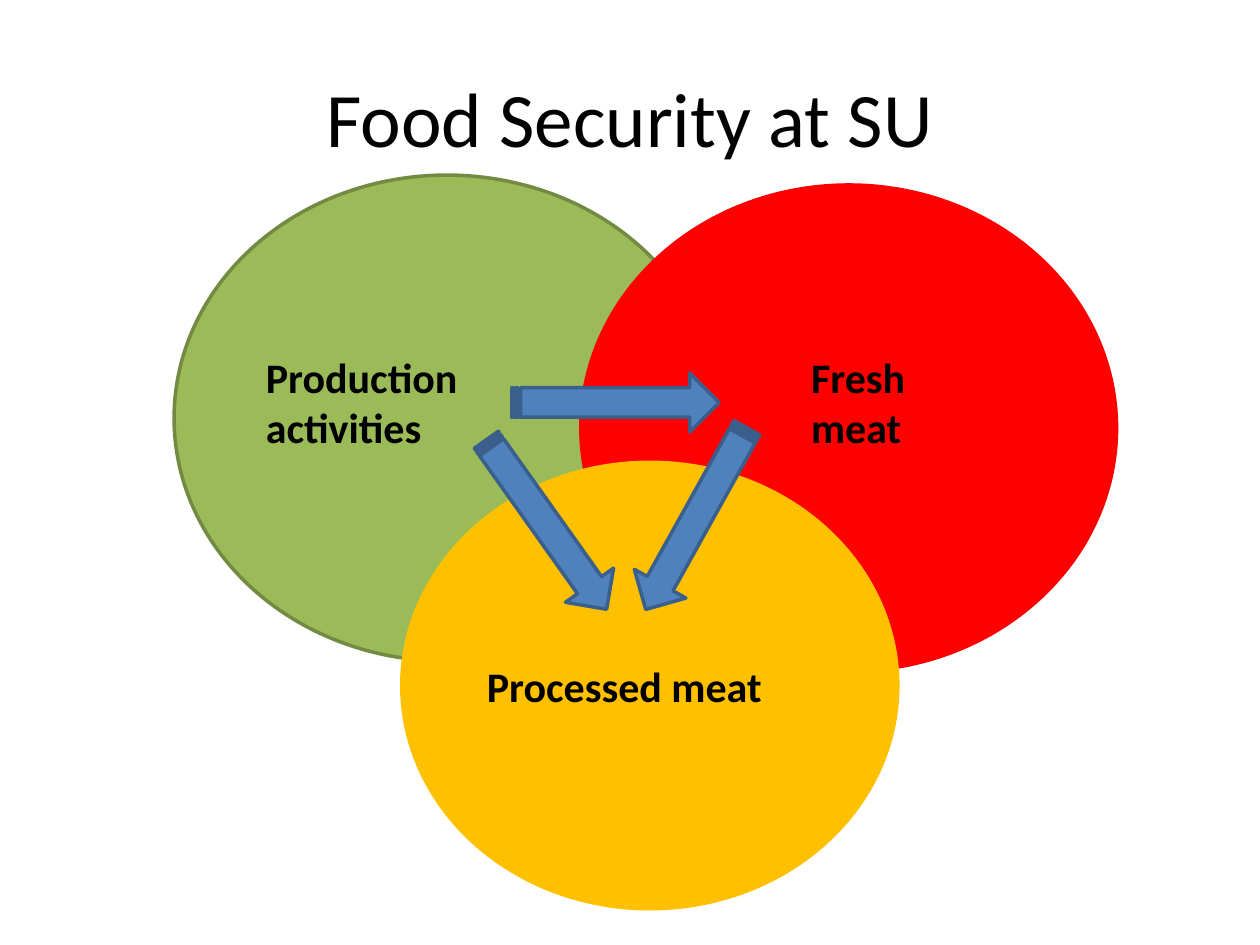
import pptx
import pptx.dml.color
import pptx.enum.shapes
import pptx.enum.text
import pptx.util
from pptx.util import Cm

SHAPE = pptx.enum.shapes.MSO_SHAPE
ALIGN = pptx.enum.text.PP_ALIGN
ANCHOR = pptx.enum.text.MSO_ANCHOR


def color(hex_value):
    return pptx.dml.color.RGBColor.from_string(hex_value)


class VennSlide:
    """Holds the style and the slide being drawn; lengths are in centimetres."""

    font = "Calibri"
    text_color = "000000"
    line_width = 2
    arrow_size = (4.19, 1.19)
    arrow_fill, arrow_line = "4F81BD", "3A5F8C"

    def __init__(self, presentation):
        self.slide = presentation.slides.add_slide(presentation.slide_layouts[6])

    def set_text(self, shape, text, size=24, bold=True, align=ALIGN.LEFT, anchor=ANCHOR.TOP):
        frame = shape.text_frame
        frame.word_wrap = True
        frame.vertical_anchor = anchor
        frame.text = text
        paragraph = frame.paragraphs[0]
        paragraph.alignment = align
        font = paragraph.runs[0].font
        font.name, font.size, font.bold = self.font, pptx.util.Pt(size), bold
        font.color.rgb = color(self.text_color)

    def label(self, box, text, **style):
        self.set_text(self.slide.shapes.add_textbox(*map(Cm, box)), text, **style)

    def figure(self, kind, box, fill, line):
        shape = self.slide.shapes.add_shape(kind, *map(Cm, box))
        shape.shadow.inherit = False
        shape.fill.solid()
        shape.fill.fore_color.rgb = color(fill)
        shape.line.color.rgb = color(line)
        shape.line.width = pptx.util.Pt(self.line_width)
        return shape

    def circle(self, box, fill, line=None):
        return self.figure(SHAPE.OVAL, box, fill, line or fill)

    def arrow(self, left, top, rotation=0):
        shape = self.figure(SHAPE.STRIPED_RIGHT_ARROW, (left, top, *self.arrow_size),
                            self.arrow_fill, self.arrow_line)
        shape.rotation = rotation


def main():
    presentation = pptx.Presentation()
    presentation.slide_width, presentation.slide_height = Cm(25.4), Cm(19.05)
    venn = VennSlide(presentation)

    venn.label((1.27, 0.76, 22.86, 3.18), "Food Security at SU", size=44, bold=False,
               align=ALIGN.CENTER, anchor=ANCHOR.MIDDLE)

    venn.circle((3.51, 3.53, 11, 9.8), "9BBB59", "738A42")
    venn.circle((11.71, 3.73, 10.8, 9.8), "FF0000")
    venn.label((5.11, 6.96, 5.59, 2.31), "Production activities")
    venn.label((16.1, 6.96, 3.61, 2.31), "Fresh meat")

    processed_meat = venn.circle((8.1, 9.32, 10, 9), "FFC000")
    venn.set_text(processed_meat, "Processed meat", anchor=ANCHOR.MIDDLE)

    for left, top, rotation in ((10.31, 7.52, 0), (8.92, 9.98, 54.6), (11.94, 9.86, 119.1)):
        venn.arrow(left, top, rotation)

    presentation.save("out.pptx")


if __name__ == "__main__":
    main()
